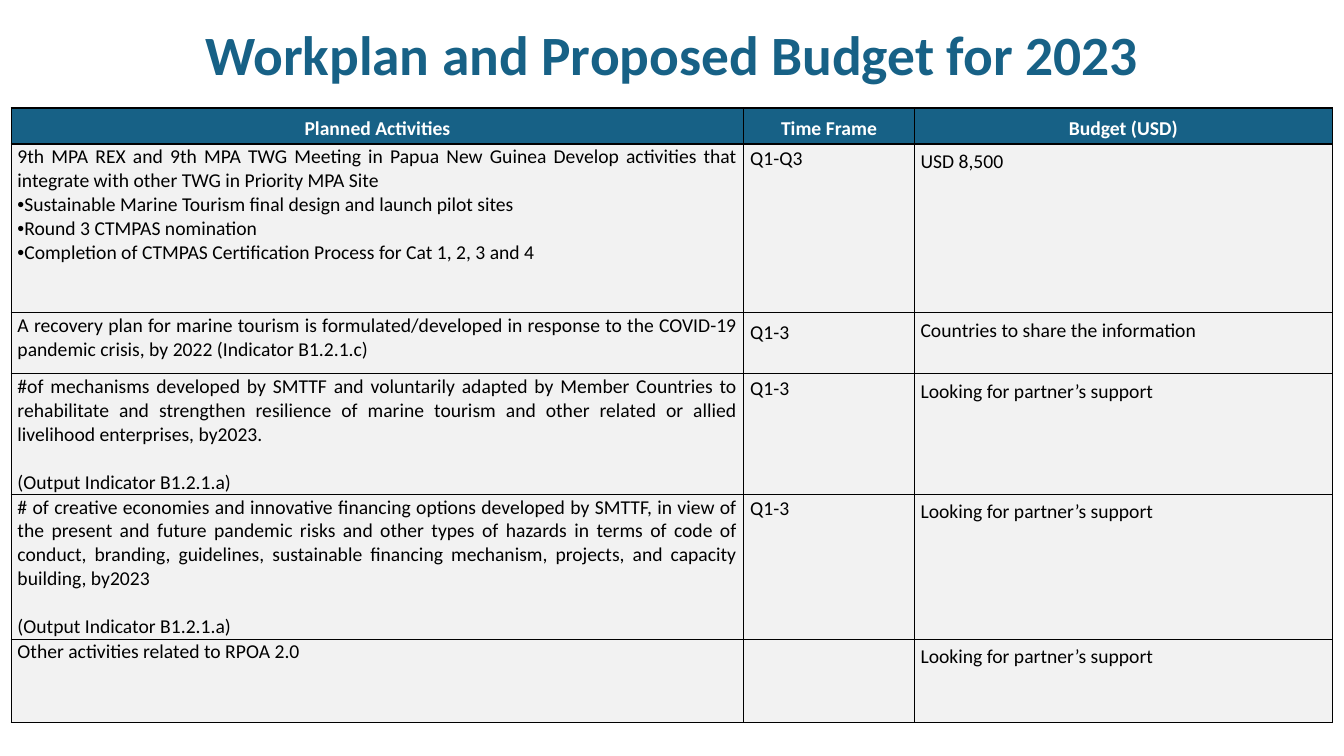
from lxml.etree import SubElement
from pptx import Presentation
from pptx.dml.color import RGBColor
from pptx.enum.text import MSO_ANCHOR as Anchor, MSO_AUTO_SIZE as AutoSize, PP_ALIGN as Align
from pptx.oxml.ns import qn
from pptx.util import Cm, Pt

COLORS = {"teal": "176186", "white": "FFFFFF", "pale": "F2F2F2", "black": "000000"}

TITLE = {"alignment": Align.CENTER, "line_spacing": 1.07, "space_after": Pt(8)}
HEADING = {"alignment": Align.CENTER, "line_spacing": 1.2, "space_after": Pt(6)}
ACTIVITY = {"alignment": Align.JUSTIFY}
INDICATOR = {"alignment": Align.JUSTIFY, "space_before": Pt(17)}
TIME = {"alignment": Align.LEFT, "line_spacing": 1.07}
BUDGET = {"alignment": Align.JUSTIFY, "line_spacing": 1.2, "space_after": Pt(6)}
MARGINS = {"margin_left": Cm(0.16), "margin_right": Cm(0.16),
           "margin_top": Cm(0.03), "margin_bottom": 0}

HEADINGS = ["Planned Activities", "Time Frame", "Budget (USD)"]
COLUMN_SHARES = [7.27, 1.69, 4.15]
ROW_HEIGHTS = [0.91, 4.25, 1.54, 3.03, 3.65, 2.1]
PARTNER = "Looking for partner’s support"
OUTPUT = "(Output Indicator B1.2.1.a)"
PLAN = [
    (["9th MPA REX and 9th MPA TWG Meeting in Papua New Guinea Develop activities that "
      "integrate with other TWG in Priority MPA Site",
      "•Sustainable Marine Tourism final design and launch pilot sites",
      "•Round 3 CTMPAS nomination",
      "•Completion of CTMPAS Certification Process for Cat 1, 2, 3 and 4"],
     "Q1-Q3", "USD 8,500"),
    (["A recovery plan for marine tourism is formulated/developed in response to the "
      "COVID-19 pandemic crisis, by 2022 (Indicator B1.2.1.c)"],
     "Q1-3", "Countries to share the information"),
    (["#of mechanisms developed by SMTTF and voluntarily adapted by Member Countries to "
      "rehabilitate and strengthen resilience of marine tourism and other related or "
      "allied livelihood enterprises, by2023.", OUTPUT],
     "Q1-3", PARTNER),
    (["# of creative economies and innovative financing options developed by SMTTF, in "
      "view of the present and future pandemic risks and other types of hazards in terms "
      "of code of conduct, branding, guidelines, sustainable financing mechanism, "
      "projects, and capacity building, by2023", OUTPUT],
     "Q1-3", PARTNER),
    (["Other activities related to RPOA 2.0"], "", PARTNER),
]


def apply(target, values):
    for name, value in values.items():
        setattr(target, name, value)


def write(paragraph, text, layout, color, size=14, bold=False):
    apply(paragraph, layout)
    run = paragraph.add_run()
    run.text = text
    apply(run.font, {"name": "Calibri", "size": Pt(size), "bold": bold})
    run.font.color.rgb = RGBColor.from_string(COLORS[color])


def add_bullet(paragraph):
    properties = paragraph._p.get_or_add_pPr()
    properties.set("marL", "0")
    properties.set("indent", str(-Cm(0.5)))
    SubElement(properties, qn("a:buFont"), typeface="Arial")
    SubElement(properties, qn("a:buChar"), char="•")


def style_cell(cell, fill):
    """Set margins, black borders and fill; borders must precede the fill in the XML."""
    apply(cell, MARGINS)
    properties = cell._tc.get_or_add_tcPr()
    for side in ("a:lnL", "a:lnR", "a:lnT", "a:lnB"):
        border = SubElement(properties, qn(side), w=str(Pt(1)))
        solid = SubElement(border, qn("a:solidFill"))
        SubElement(solid, qn("a:srgbClr"), val=COLORS["black"])
    cell.fill.solid()
    cell.fill.fore_color.rgb = RGBColor.from_string(COLORS[fill])


def write_activities(frame, lines):
    for index, line in enumerate(lines):
        paragraph = frame.paragraphs[0] if index == 0 else frame.add_paragraph()
        layout = INDICATOR if line == OUTPUT else ACTIVITY
        write(paragraph, line.removeprefix("•"), layout, "black")
        if line.startswith("•"):
            add_bullet(paragraph)


def place_title(slide, left, top, width, height):
    title = slide.shapes.title
    apply(title, {"left": left, "top": top, "width": width, "height": height})
    apply(title.text_frame, {"vertical_anchor": Anchor.MIDDLE, "auto_size": AutoSize.NONE})
    write(title.text_frame.paragraphs[0], "Workplan and Proposed Budget for 2023",
          TITLE, "teal", size=39.6, bold=True)


def place_workplan(slide, left, top, width, height):
    table = slide.shapes.add_table(len(PLAN) + 1, len(HEADINGS),
                                   left, top, width, height).table
    apply(table, {"first_row": False, "horz_banding": False})
    for column, share in zip(table.columns, COLUMN_SHARES):
        column.width = int(width * share / sum(COLUMN_SHARES))
    for row, row_height in zip(table.rows, ROW_HEIGHTS):
        row.height = Cm(row_height)

    for cell, heading in zip(table.rows[0].cells, HEADINGS):
        style_cell(cell, "teal")
        cell.vertical_anchor = Anchor.MIDDLE
        write(cell.text_frame.paragraphs[0], heading, HEADING, "white", bold=True)

    for row, (activities, quarters, budget) in zip(list(table.rows)[1:], PLAN):
        for cell in row.cells:
            style_cell(cell, "pale")
        activity_cell, time_cell, budget_cell = row.cells
        write_activities(activity_cell.text_frame, activities)
        if quarters:
            write(time_cell.text_frame.paragraphs[0], quarters, TIME, "black")
        write(budget_cell.text_frame.paragraphs[0], budget, BUDGET, "black")
    table.cell(2, 1).margin_top = Cm(0.16)


def main():
    deck = Presentation()
    apply(deck, {"slide_width": Cm(33.87), "slide_height": Cm(19.05)})
    slide = deck.slides.add_slide(deck.slide_layouts[5])
    place_title(slide, Cm(2.33), Cm(0.53), Cm(29.21), Cm(1.5))
    place_workplan(slide, Cm(0.28), Cm(2.72), Cm(33.3), Cm(sum(ROW_HEIGHTS)))
    deck.save("out.pptx")


if __name__ == "__main__":
    main()
